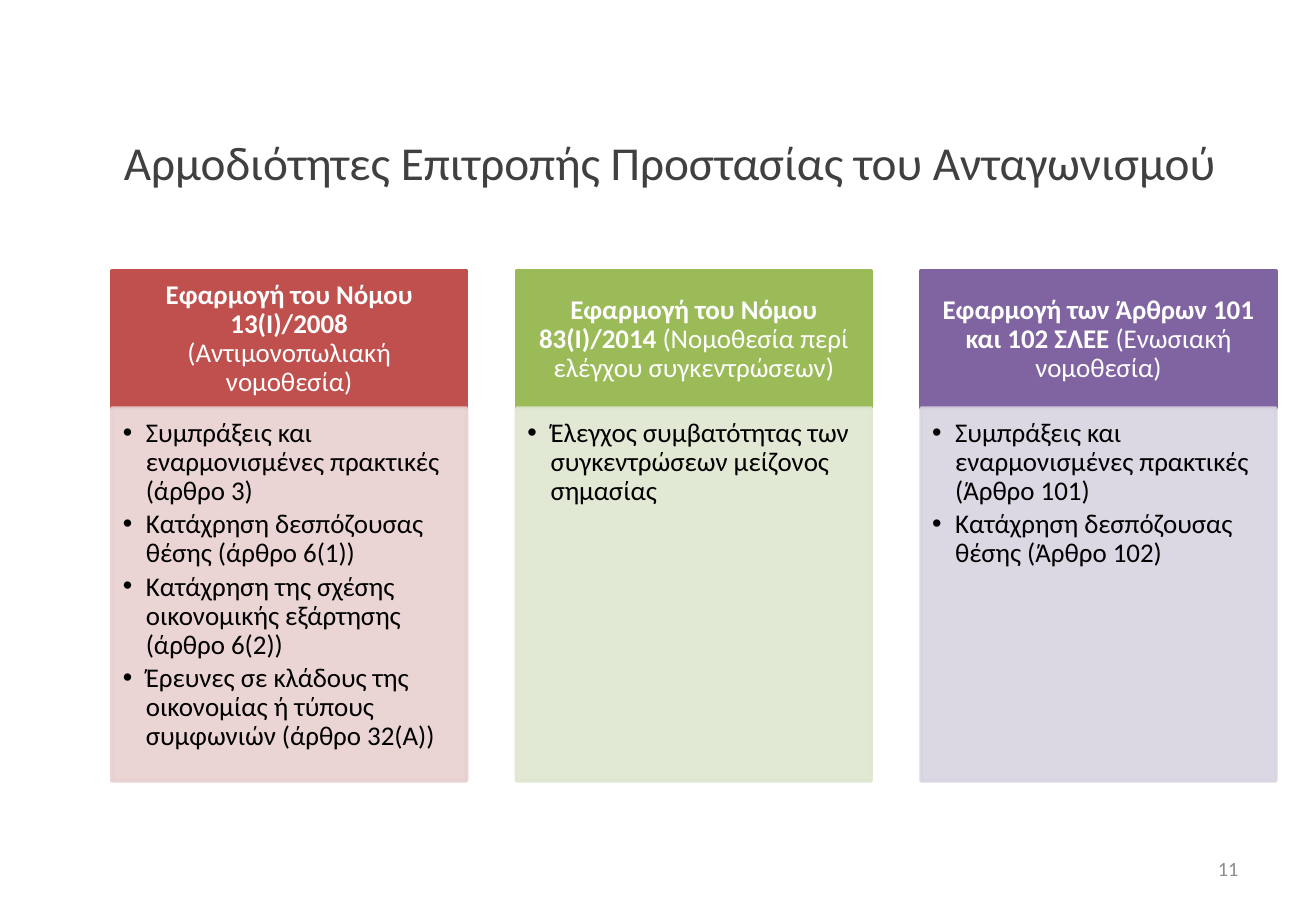
from dataclasses import dataclass

from lxml import etree
from pptx import Presentation
from pptx.dml.color import RGBColor
from pptx.enum.shapes import MSO_SHAPE
from pptx.enum.text import MSO_ANCHOR, PP_ALIGN
from pptx.oxml.ns import qn
from pptx.util import Inches, Pt

RECT = MSO_SHAPE.RECTANGLE
TOP, MIDDLE = MSO_ANCHOR.TOP, MSO_ANCHOR.MIDDLE
LEFT, CENTER, RIGHT = PP_ALIGN.LEFT, PP_ALIGN.CENTER, PP_ALIGN.RIGHT
FONT = "Calibri"
START, STEP, WIDTH = 0.92, 3.33, 2.92
HEAD_TOP, HEAD_HIGH, BODY_HIGH = 2.23, 1.13, 3.07


@dataclass
class Column:
    law: str
    note: str
    dark: str
    pale: str
    points: list[str]


COLUMNS = [
    Column("Εφαρμογή του Νόμου 13(Ι)/2008 ", "(Αντιμονοπωλιακή νομοθεσία)",
           "C0504D", "E8D0D0",
           ["Συμπράξεις και εναρμονισμένες πρακτικές (άρθρο 3)",
            "Κατάχρηση δεσπόζουσας θέσης (άρθρο 6(1))",
            "Κατάχρηση της σχέσης οικονομικής εξάρτησης (άρθρο 6(2))",
            "Έρευνες σε κλάδους της οικονομίας ή τύπους συμφωνιών (άρθρο 32(Α))"]),
    Column("Εφαρμογή του Νόμου 83(Ι)/2014 ", "(Νομοθεσία περί ελέγχου συγκεντρώσεων)",
           "9BBB59", "DEE7D1",
           ["Έλεγχος συμβατότητας των συγκεντρώσεων μείζονος σημασίας"]),
    Column("Εφαρμογή των Άρθρων 101 και 102 ΣΛΕΕ ", "(Ενωσιακή νομοθεσία)",
           "8064A2", "D8D3E0",
           ["Συμπράξεις και εναρμονισμένες πρακτικές (Άρθρο 101)",
            "Κατάχρηση δεσπόζουσας θέσης (Άρθρο 102)"]),
]


def color(code: str) -> RGBColor:
    return RGBColor.from_string(code)


def style(para, size: float, code: str, align) -> None:
    para.alignment = align
    para.font.name = FONT
    para.font.size = Pt(size)
    para.font.color.rgb = color(code)


def inset(frame, left: float, top: float, right: float, bottom: float) -> None:
    frame.margin_left, frame.margin_top = Inches(left), Inches(top)
    frame.margin_right, frame.margin_bottom = Inches(right), Inches(bottom)


def label(slide, box: tuple, text: str, size: float, code: str, align) -> None:
    frame = slide.shapes.add_textbox(*map(Inches, box)).text_frame
    frame.word_wrap = True
    frame.vertical_anchor = MIDDLE
    para = frame.paragraphs[0]
    para.text = text
    style(para, size, code, align)


def panel(slide, box: tuple, code: str, anchor):
    shape = slide.shapes.add_shape(RECT, *map(Inches, box))
    shape.shadow.inherit = False
    shape.fill.solid()
    shape.fill.fore_color.rgb = color(code)
    shape.line.color.rgb = color(code)
    shape.line.width = Pt(2)
    shape.text_frame.word_wrap = True
    shape.text_frame.vertical_anchor = anchor
    return shape


def fade(shape, share: int) -> None:
    for tone in shape.element.spPr.iter(qn("a:srgbClr")):
        etree.SubElement(tone, qn("a:alpha"), val=str(share * 1000))


def bullet(para) -> None:
    props = para._p.get_or_add_pPr()
    props.set("marL", str(Inches(0.19)))
    props.set("indent", str(Inches(-0.19)))
    etree.SubElement(props, qn("a:buFont"), typeface="Arial")
    etree.SubElement(props, qn("a:buChar"), char="•")


def draw(slide, col: Column, left: float) -> None:
    head = panel(slide, (left, HEAD_TOP, WIDTH, HEAD_HIGH), col.dark, MIDDLE)
    inset(head.text_frame, 0.12, 0.07, 0.12, 0.07)
    para = head.text_frame.paragraphs[0]
    para.line_spacing = 0.9
    for text, bold in ((col.law, True), (col.note, False)):
        run = para.add_run()
        run.text = text
        run.font.bold = bold
    style(para, 16, "FFFFFF", CENTER)

    body = panel(slide, (left, HEAD_TOP + HEAD_HIGH, WIDTH, BODY_HIGH), col.pale, TOP)
    fade(body, 90)
    frame = body.text_frame
    inset(frame, 0.09, 0.09, 0.12, 0.14)
    for index, point in enumerate(col.points):
        para = frame.add_paragraph() if index else frame.paragraphs[0]
        para.text = point
        para.line_spacing = 0.9
        para.space_after = Pt(2.4)
        bullet(para)
        style(para, 16, "000000", LEFT)


def main() -> None:
    deck = Presentation()
    deck.slide_width, deck.slide_height = Inches(10.83), Inches(7.5)
    slide = deck.slides.add_slide(deck.slide_layouts[6])
    label(slide, (START, 0.85, 9.58, 0.96),
          "Αρμοδιότητες Επιτροπής Προστασίας του Ανταγωνισμού", 28, "404040", LEFT)
    for index, col in enumerate(COLUMNS):
        draw(slide, col, START + index * STEP)
    label(slide, (7.76, 6.95, 2.53, 0.4), "11", 12, "8C8C8C", RIGHT)
    deck.save("out.pptx")


if __name__ == "__main__":
    main()
